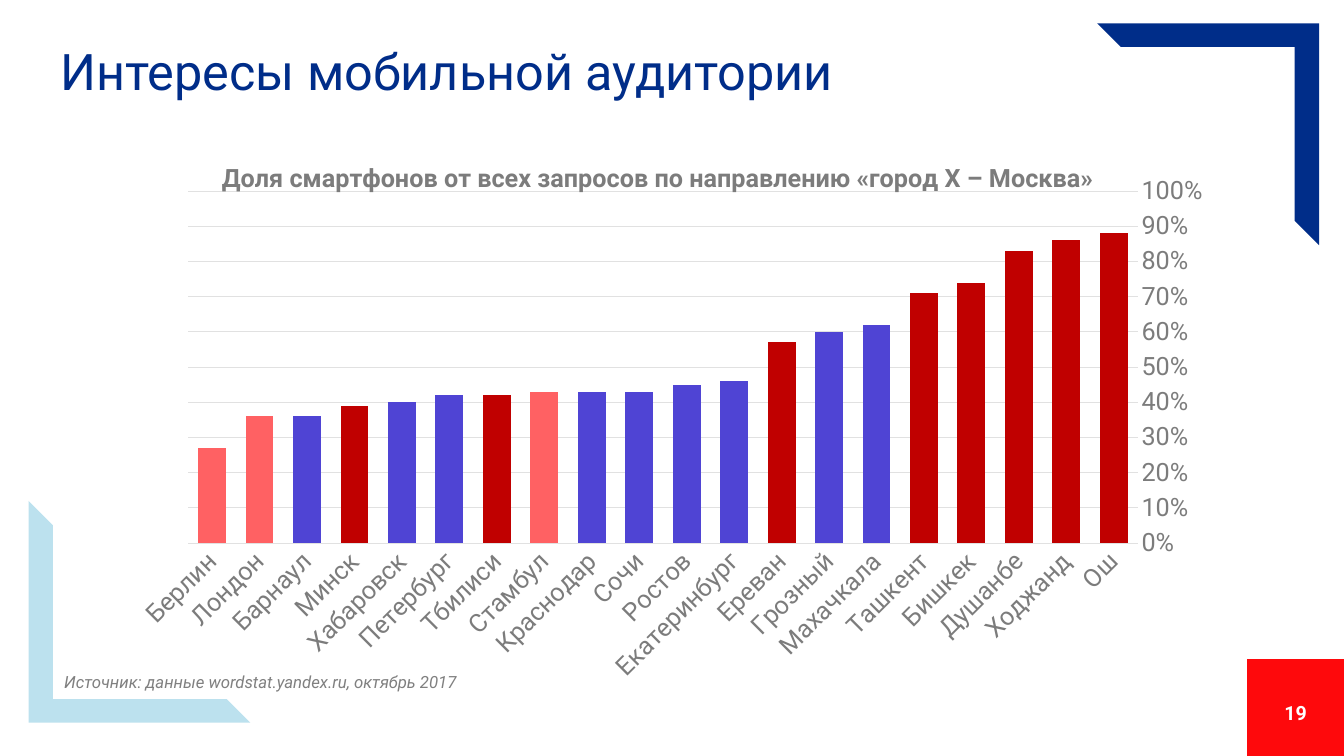
from dataclasses import dataclass

from pptx import Presentation
from pptx.chart.data import CategoryChartData
from pptx.dml.color import RGBColor
from pptx.enum.chart import XL_CHART_TYPE as ChartType, XL_TICK_MARK as Tick
from pptx.enum.shapes import MSO_SHAPE as Shape
from pptx.enum.text import MSO_ANCHOR as Anchor, MSO_AUTO_SIZE as AutoSize, PP_ALIGN as Align
from pptx.oxml import parse_xml
from pptx.oxml.ns import nsdecls, qn
from pptx.util import Cm, Pt

FONT = "Roboto"
NAVY = RGBColor(0x00, 0x2D, 0x89)
SKY = RGBColor(0xBC, 0xE1, 0xEE)
SCARLET = RGBColor(0xFE, 0x09, 0x0C)
WHITE = RGBColor(0xFF, 0xFF, 0xFF)
GRAY = RGBColor(0x7C, 0x7C, 0x7C)
NOTE_GRAY = RGBColor(0x80, 0x80, 0x80)
GRID = RGBColor(0xE1, 0xE1, 0xE1)
# Bar colours by group of cities
RUSSIA = RGBColor(0x4F, 0x44, 0xD4)
NEAR = RGBColor(0xC0, 0x00, 0x00)
FAR = RGBColor(0xFF, 0x61, 0x63)


@dataclass
class Decor:
    shape: Shape
    left: float
    top: float
    size: float
    color: RGBColor
    rotation: int = 0
    adjustments: tuple[float, ...] = ()


@dataclass
class Label:
    text: str
    box: tuple[float, float, float, float]
    font: dict
    align: Align = Align.LEFT
    anchor: Anchor = Anchor.TOP


@dataclass
class City:
    name: str
    share: float
    color: RGBColor


DECORS = [
    Decor(Shape.RECTANGLE, 31.43, 16.61, 2.44, SCARLET),
    Decor(Shape.HALF_FRAME, 0.72, 12.62, 5.59, SKY, 270, (0.11, 0.106)),
    Decor(Shape.HALF_FRAME, 27.65, 0.59, 5.59, NAVY, 90, (0.11, 0.106)),
]
LABELS = [
    Label("19", (31.43, 17.45, 2.44, 1.02),
          {"size": Pt(14), "bold": True, "color": WHITE}, Align.CENTER, Anchor.MIDDLE),
    Label("Источник: данные wordstat.yandex.ru, октябрь 2017", (1.37, 16.79, 13.06, 0.76),
          {"size": Pt(12), "italic": True, "color": NOTE_GRAY}),
]
CITIES = [
    City("Ош", 0.88, NEAR), City("Ходжанд", 0.86, NEAR),
    City("Душанбе", 0.83, NEAR), City("Бишкек", 0.74, NEAR),
    City("Ташкент", 0.71, NEAR), City("Махачкала", 0.62, RUSSIA),
    City("Грозный", 0.6, RUSSIA), City("Ереван", 0.57, NEAR),
    City("Екатеринбург", 0.46, RUSSIA), City("Ростов", 0.45, RUSSIA),
    City("Сочи", 0.43, RUSSIA), City("Краснодар", 0.43, RUSSIA),
    City("Стамбул", 0.43, FAR), City("Тбилиси", 0.42, NEAR),
    City("Петербург", 0.42, RUSSIA), City("Хабаровск", 0.4, RUSSIA),
    City("Минск", 0.39, NEAR), City("Барнаул", 0.36, RUSSIA),
    City("Лондон", 0.36, FAR), City("Берлин", 0.27, FAR),
]


def set_font(font, values: dict) -> None:
    for name, value in {"name": FONT, **values}.items():
        if name == "color":
            font.color.rgb = value
        else:
            setattr(font, name, value)


def add_decor(s, item: Decor) -> None:
    sp = s.shapes.add_shape(item.shape, Cm(item.left), Cm(item.top), Cm(item.size), Cm(item.size))
    sp.shadow.inherit = False
    sp.fill.solid()
    sp.fill.fore_color.rgb = item.color
    sp.line.fill.background()
    sp.rotation = item.rotation
    for i, value in enumerate(item.adjustments):
        sp.adjustments[i] = value


def add_label(s, item: Label) -> None:
    tf = s.shapes.add_textbox(*map(Cm, item.box)).text_frame
    tf.word_wrap = True
    tf.vertical_anchor = item.anchor
    p = tf.paragraphs[0]
    p.alignment = item.align
    r = p.add_run()
    r.text = item.text
    set_font(r.font, item.font)


def set_layout(parent, **values: float) -> None:
    """Place a chart part by fractions of the chart area."""
    old = parent.find(qn("c:layout"))
    if old is not None:
        parent.remove(old)
    target = '<c:layoutTarget val="inner"/>' if "w" in values else ""
    modes = "".join(f'<c:{k}Mode val="edge"/>' for k in values if k in "xy")
    places = "".join(f'<c:{k} val="{v}"/>' for k, v in values.items())
    layout = parse_xml(f'<c:layout {nsdecls("c")}><c:manualLayout>{target}{modes}{places}'
                       '</c:manualLayout></c:layout>')
    tx = parent.find(qn("c:tx"))
    parent.insert(0 if tx is None else 1, layout)


def add_share_chart(s, cities: list[City]) -> None:
    data = CategoryChartData(number_format="0%")
    data.categories = [c.name for c in cities]
    data.add_series("Series 1", [c.share for c in cities])
    chart = s.shapes.add_chart(ChartType.COLUMN_CLUSTERED, Cm(1.68), Cm(3.38),
                               Cm(29.21), Cm(14.1), data).chart
    chart.has_legend = False
    set_font(chart.font, {"size": Pt(18), "color": GRAY})

    # Chart title and plot area
    chart.has_title = True
    title = chart.chart_title
    p = title.text_frame.paragraphs[0]
    r = p.add_run()
    r.text = "Доля смартфонов от всех запросов по направлению «город Х – Москва»"
    set_font(r.font, {"size": Pt(18), "bold": True, "color": GRAY})
    set_layout(title._element, x=0.13, y=0.04)
    set_layout(chart._chartSpace.chart.plotArea, x=0.105, y=0.102, w=0.819, h=0.629)

    # Axes
    cat, val = chart.category_axis, chart.value_axis
    for axis in (cat, val):
        axis.major_tick_mark = axis.minor_tick_mark = Tick.NONE
        set_font(axis.tick_labels.font, {"size": Pt(18), "color": GRAY})
    cat.reverse_order = True
    cat._element.find(qn("c:txPr")).find(qn("a:bodyPr")).set("rot", "-2700000")
    val.minimum_scale, val.maximum_scale, val.major_unit = 0, 1, 0.1
    val.tick_labels.number_format = "0%"
    val.tick_labels.number_format_is_linked = False
    val.format.line.fill.background()
    val.has_major_gridlines = True
    for line in (cat.format.line, val.major_gridlines.format.line):
        line.color.rgb = GRID
        line.width = Pt(0.75)

    # Bars
    plot = chart.plots[0]
    plot.gap_width = 70
    plot.vary_by_categories = False
    for i, city in enumerate(cities):
        fill = plot.series[0].points[i].format.fill
        fill.solid()
        fill.fore_color.rgb = city.color


def add_title(s, text: str) -> None:
    sp = s.shapes.title
    sp.left, sp.top, sp.width, sp.height = map(Cm, (1.27, 0.36, 29.21, 3))
    tf = sp.text_frame
    tf.text = text
    tf.word_wrap = True
    tf.auto_size = AutoSize.NONE
    tf.vertical_anchor = Anchor.MIDDLE
    p = tf.paragraphs[0]
    p.alignment = Align.LEFT
    p.line_spacing = 0.9
    set_font(p.runs[0].font, {"size": Pt(36), "color": NAVY})


def main() -> None:
    prs = Presentation()
    prs.slide_width, prs.slide_height = Cm(33.87), Cm(19.05)
    s = prs.slides.add_slide(prs.slide_layouts[5])
    for decor in DECORS:
        add_decor(s, decor)
    add_title(s, "Интересы мобильной аудитории")
    add_share_chart(s, CITIES)
    for label in LABELS:
        add_label(s, label)
    prs.save("out.pptx")


if __name__ == "__main__":
    main()
